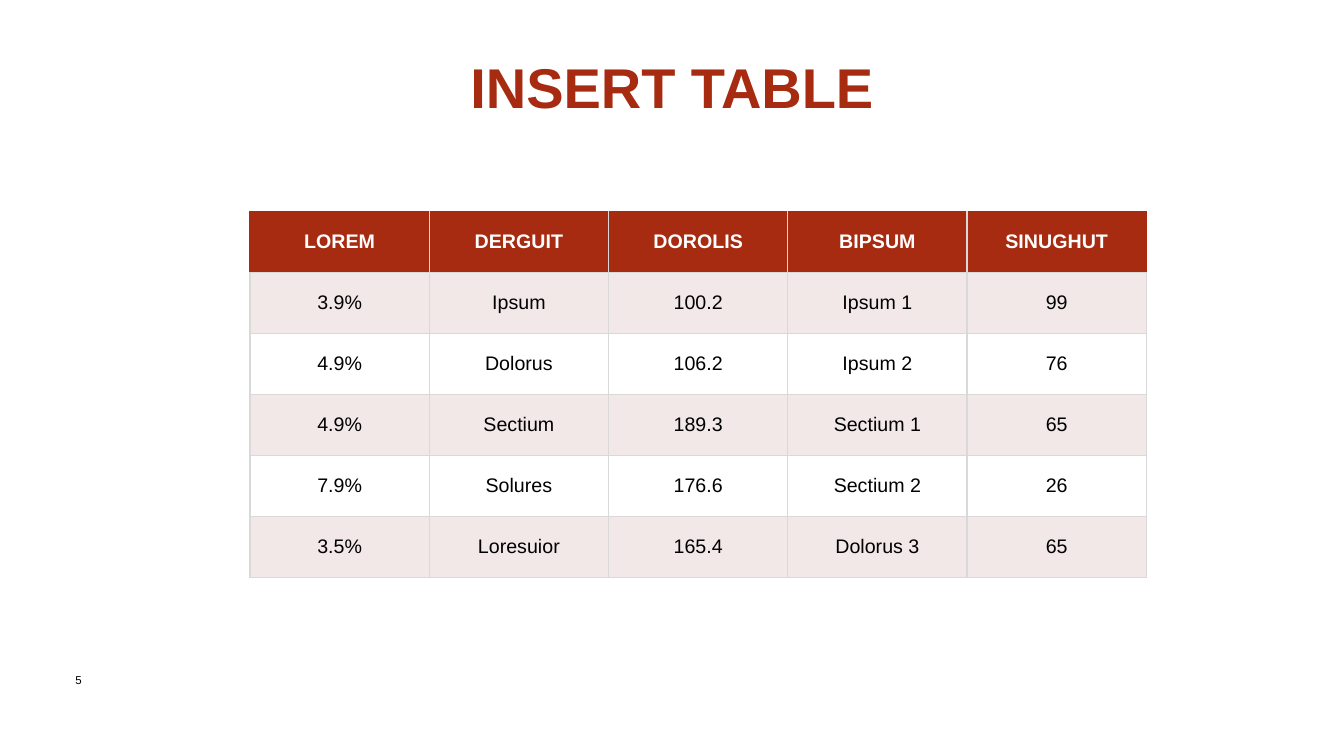
from lxml import etree
from pptx import Presentation
from pptx import util as u
from pptx.dml.color import RGBColor
from pptx.enum import text
from pptx.oxml import ns

RED = RGBColor(0xA6, 0x2B, 0x10)
BLUSH = RGBColor(0xF1, 0xE8, 0xE7)
GRID = RGBColor(0xD9, 0xD9, 0xD9)
WHITE = RGBColor(0xFF, 0xFF, 0xFF)
BLACK = RGBColor(0, 0, 0)

ROWS = [
    ("LOREM", "DERGUIT", "DOROLIS", "BIPSUM", "SINUGHUT"),
    ("3.9%", "Ipsum", "100.2", "Ipsum 1", "99"),
    ("4.9%", "Dolorus", "106.2", "Ipsum 2", "76"),
    ("4.9%", "Sectium", "189.3", "Sectium 1", "65"),
    ("7.9%", "Solures", "176.6", "Sectium 2", "26"),
    ("3.5%", "Loresuior", "165.4", "Dolorus 3", "65"),
]


class SlideBuilder:
    FONT = "Arial"
    CENTER = text.PP_ALIGN.CENTER
    MIDDLE = text.MSO_ANCHOR.MIDDLE

    def __init__(self, slide):
        self.slide = slide

    def set_text(self, frame, words, size, color, bold=False, align=None):
        paragraph = frame.paragraphs[0]
        paragraph.text = words
        paragraph.alignment = align
        font = paragraph.font
        font.name, font.size, font.bold = self.FONT, u.Pt(size), bold
        font.color.rgb = color

    def label(self, words, box, size, color, bold=False, align=None,
              anchor=text.MSO_ANCHOR.TOP):
        frame = self.slide.shapes.add_textbox(*map(u.Inches, box)).text_frame
        frame.word_wrap = True
        frame.vertical_anchor = anchor
        self.set_text(frame, words, size, color, bold, align)

    def borders(self, cell, left, right, top, bottom):
        """Give the four cell edges 1 pt lines in the given colours."""
        properties = cell._tc.get_or_add_tcPr()
        edges = zip(("lnL", "lnR", "lnT", "lnB"), (left, right, top, bottom))
        for position, (edge, color) in enumerate(edges):
            line = etree.Element(ns.qn(f"a:{edge}"), w=str(u.Pt(1)))
            fill = etree.SubElement(line, ns.qn("a:solidFill"))
            etree.SubElement(fill, ns.qn("a:srgbClr"), val=str(color))
            properties.insert(position, line)

    def table(self, rows, box):
        last = len(rows[0]) - 1
        grid = self.slide.shapes.add_table(
            len(rows), len(rows[0]), *map(u.Inches, box)).table
        for r, values in enumerate(rows):
            header = r == 0
            outer = RED if header else GRID
            for c, value in enumerate(values):
                cell = grid.cell(r, c)
                cell.vertical_anchor = self.MIDDLE
                cell.margin_left = cell.margin_right = u.Inches(0.08)
                cell.margin_top = cell.margin_bottom = u.Inches(0.04)
                cell.fill.solid()
                cell.fill.fore_color.rgb = RED if header else BLUSH if r % 2 else WHITE
                self.borders(cell, left=outer if c == 0 else GRID,
                             right=outer if c == last else GRID,
                             top=outer if r < 1 else GRID, bottom=GRID)
                self.set_text(cell.text_frame, value, 14,
                              WHITE if header else BLACK, header, self.CENTER)


def main():
    deck = Presentation()
    deck.slide_width, deck.slide_height = u.Inches(13.33), u.Inches(7.5)
    page = SlideBuilder(deck.slides.add_slide(deck.slide_layouts[6]))
    page.label("5", (0.65, 6.63, 0.58, 0.54), 8.2, BLACK)
    page.label("INSERT TABLE", (2.48, 0.52, 8.37, 0.67), 40, RED, True,
               page.CENTER, page.MIDDLE)
    page.table(ROWS, (2.48, 2.1, 8.89, 3.63))
    deck.save("out.pptx")


if __name__ == "__main__":
    main()
